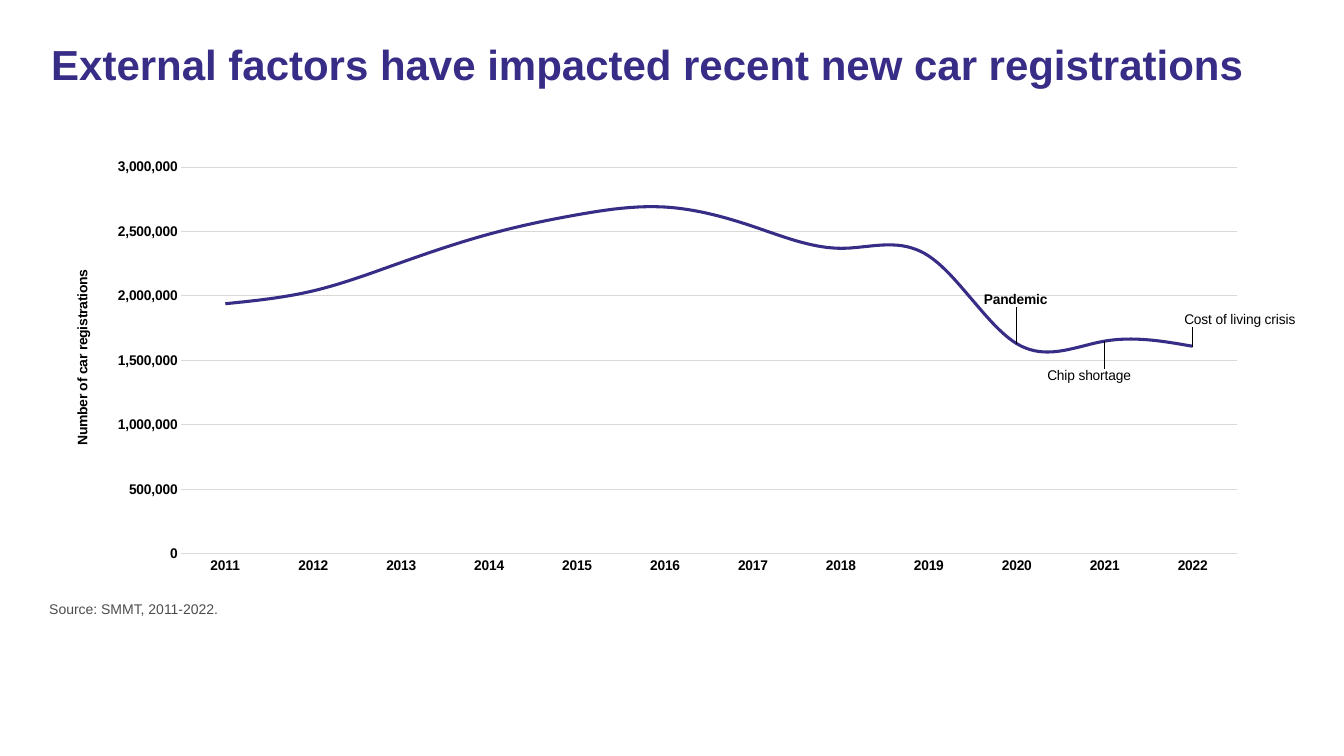
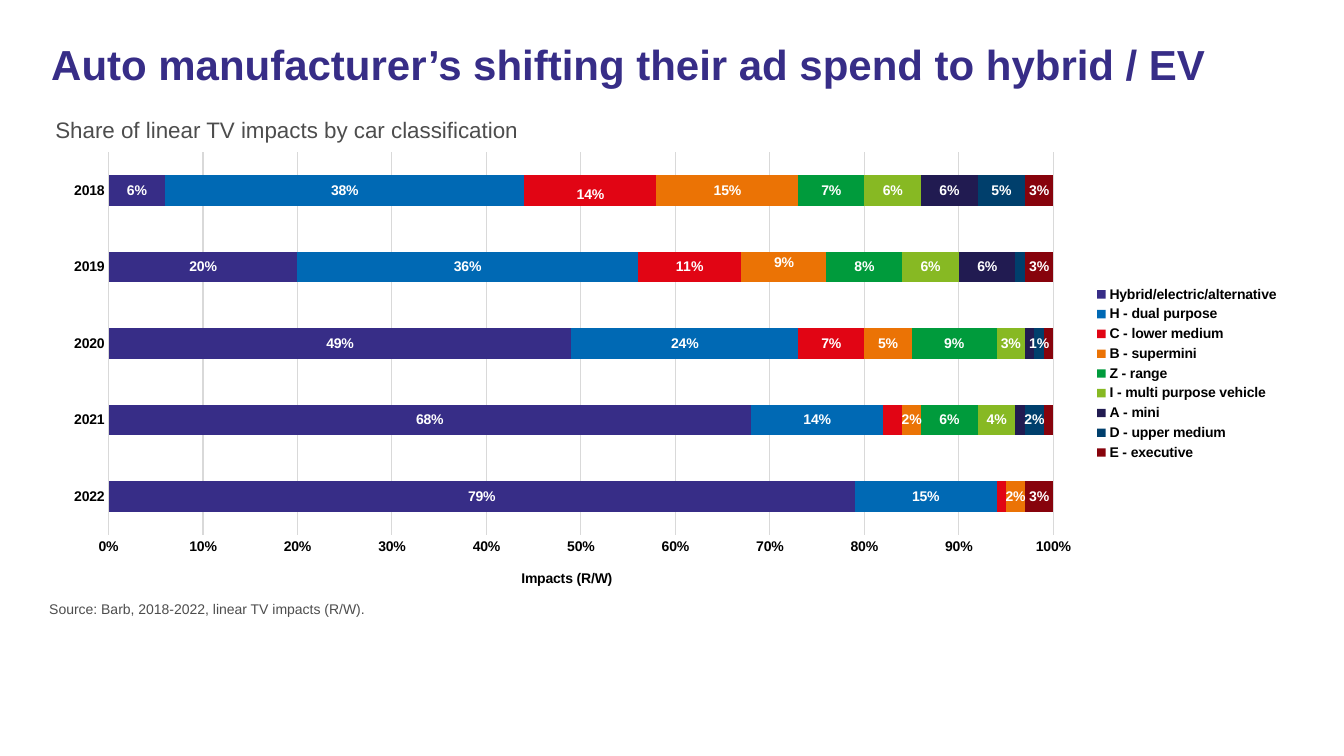
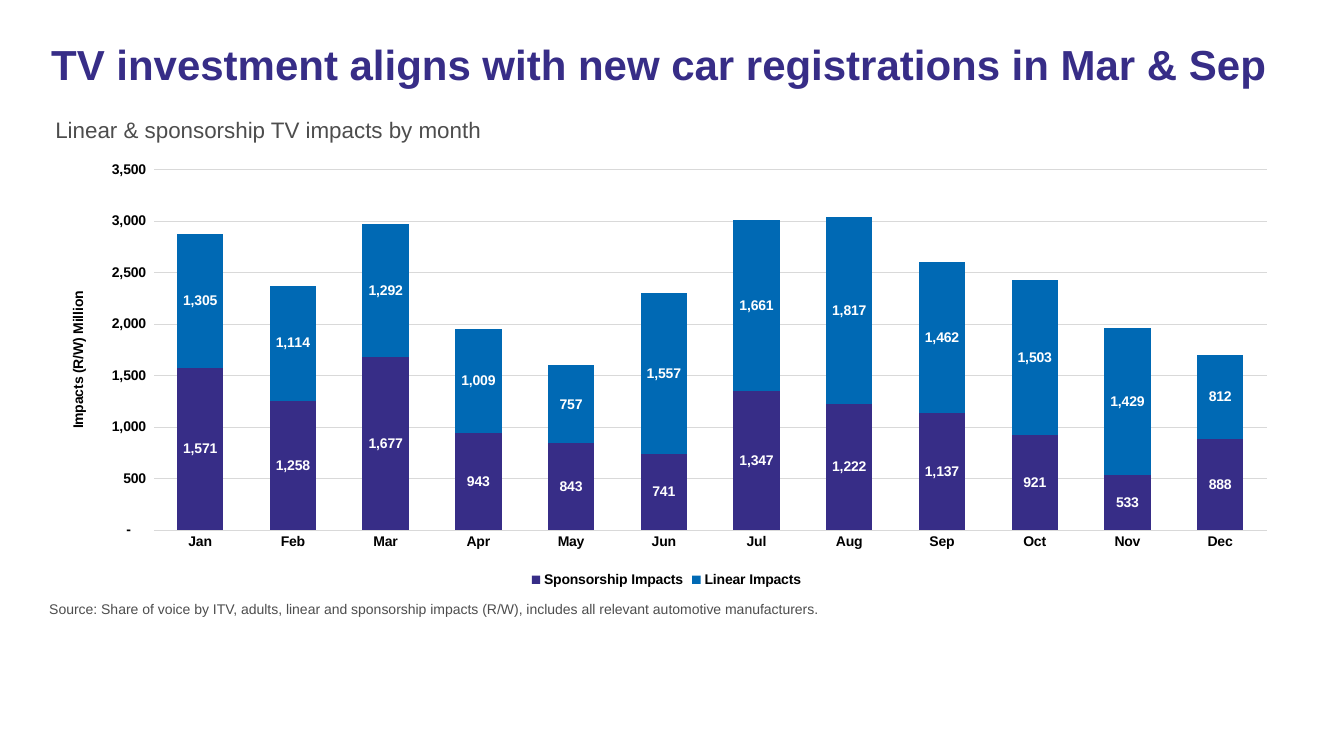
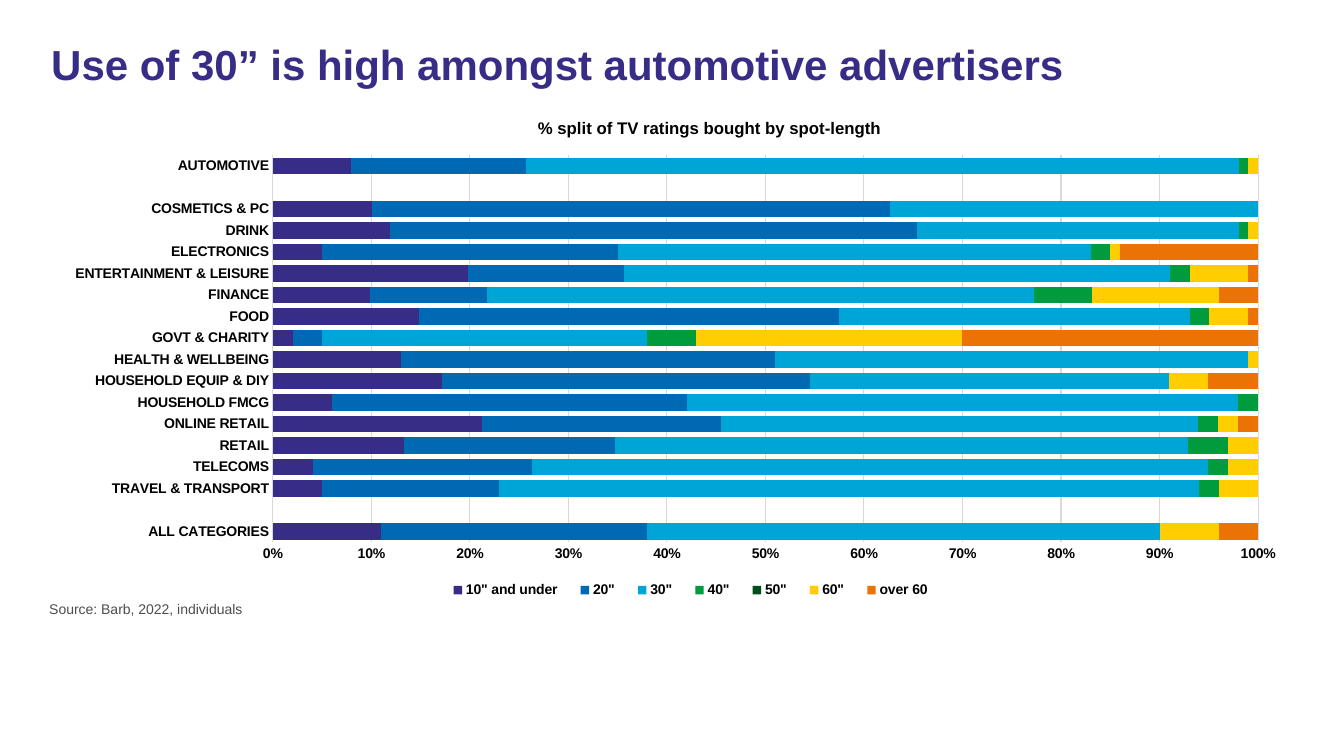
from pptx import Presentation
from pptx import util as u
from pptx.chart.data import CategoryChartData
from pptx.dml.color import RGBColor
from pptx.enum import chart as ch
from pptx.oxml import parse_xml

INK = {
    "black": "000000", "white": "FFFFFF", "text": "4D4D4D", "grid": "D9D9D9",
    "violet": "372D87", "blue": "0069B4", "sky": "00A5D7", "red": "E10514",
    "orange": "EB7305", "green": "009B3C", "lime": "87B923", "night": "211B51",
    "navy": "003F6C", "wine": "87030C", "forest": "004E1E", "yellow": "FFCD00",
}
FACE = "Arial"
NS = 'xmlns:c="http://schemas.openxmlformats.org/drawingml/2006/chart"'
LEAD = (f'<c:extLst {NS}><c:ext uri="{{CE6537A1-D6FC-4f65-9D91-7224C49458BB}}" '
        'xmlns:c15="http://schemas.microsoft.com/office/drawing/2012/chart">'
        '<c15:showLeaderLines val="1"/></c:ext></c:extLst>')
COUNT = '_-* #,##0_-;\\-* #,##0_-;_-* "-"??_-;_-@_'


def place(node, box, mode="edge", first=1):
    """Set a manual layout on a chart part, as fractions of the chart."""
    for old in node.xpath("./c:layout"):
        node.remove(old)
    parts = ['<c:layoutTarget val="inner"/>'] if first == 0 else []
    if mode:
        parts += [f'<c:{k}Mode val="{mode}"/>' for k in "xy"]
    parts += [f'<c:{k} val="{v}"/>' for k, v in zip("xywh", box)]
    node.insert(first, parse_xml(
        f'<c:layout {NS}><c:manualLayout>{"".join(parts)}</c:manualLayout></c:layout>'))


class Deck:
    def __init__(self):
        self.prs = Presentation()
        self.prs.slide_width = u.Inches(13.33)
        self.prs.slide_height = u.Inches(7.5)
        self.slide = None

    def style(self, font, size=10, ink="black", bold=True):
        font.name, font.size, font.bold = FACE, u.Pt(size), bold
        font.color.rgb = RGBColor.from_string(INK[ink])

    def text(self, box, words, size, ink="text", bold=False, lead=None):
        frame = self.slide.shapes.add_textbox(*map(u.Inches, box)).text_frame
        frame.word_wrap = True
        para = frame.paragraphs[0]
        para.line_spacing = lead
        run = para.add_run()
        run.text = words
        self.style(run.font, size, ink, bold)

    def page(self, title, source, sub=None):
        self.slide = self.prs.slides.add_slide(self.prs.slide_layouts[6])
        self.text((0.41, 0.39, 12.64, 1.12), title, 30, "violet", True, 0.9)
        self.text((0.39, 5.91, 12.4, 0.33), source, 10)
        if sub:
            self.text((0.45, 1.1, 5.51, 0.37), sub, 16)

    def chart(self, kind, box, plot, cats, rows, form, gap=None):
        """Rows are (name, ink, values)."""
        data = CategoryChartData(number_format=form)
        data.categories = cats
        for name, _, vals in rows:
            data.add_series(name, vals)
        chart = self.slide.shapes.add_chart(kind, *map(u.Inches, box), data).chart
        self.style(chart.font)
        chart.has_title = chart.has_legend = False
        place(chart._chartSpace.xpath(".//c:plotArea")[0], plot, first=0)
        for axis in (chart.category_axis, chart.value_axis):
            axis.major_tick_mark = axis.minor_tick_mark = ch.XL_TICK_MARK.NONE
            self.style(axis.tick_labels.font)
        grid = RGBColor.from_string(INK["grid"])
        axis.has_major_gridlines = True
        for line in (chart.category_axis.format.line, axis.major_gridlines.format.line):
            line.color.rgb, line.width = grid, u.Pt(0.75)
        axis.format.line.fill.background()
        axis.tick_labels.number_format = form
        axis.tick_labels.number_format_is_linked = False
        chart.category_axis.has_major_gridlines = False
        body = chart.plots[0]
        body.vary_by_categories = False
        if gap is not None:
            body.gap_width, body.overlap = gap, 100
        for ser, (_, ink, _) in zip(body.series, rows):
            tone = RGBColor.from_string(INK[ink])
            if gap is None:
                ser.smooth = True
                ser.marker.style = ch.XL_MARKER_STYLE.NONE
                ser.format.line.color.rgb, ser.format.line.width = tone, u.Pt(2.25)
            else:
                ser.format.fill.solid()
                ser.format.fill.fore_color.rgb = tone
        return chart

    def head(self, title, words, spot, size=10, turn=False):
        run = title.text_frame.paragraphs[0].add_run()
        run.text = words
        self.style(run.font, size)
        if turn:
            title._element.xpath(".//a:bodyPr")[0].set("rot", "-5400000")
        place(title._element, spot)

    def scale(self, axis, top, step):
        axis.minimum_scale, axis.maximum_scale, axis.major_unit = 0, top, step

    def legend(self, chart, side, box=None):
        chart.has_legend = True
        chart.legend.position = side
        chart.legend.include_in_layout = False
        self.style(chart.legend.font)
        if box:
            place(chart.legend._element, box)

    def labels(self, ser, form, hide=()):
        labs = ser.data_labels
        labs.show_value = True
        labs.position = ch.XL_LABEL_POSITION.CENTER
        labs.number_format, labs.number_format_is_linked = form, False
        self.style(labs.font, ink="white")
        for i in reversed(hide):
            labs._element.insert(0, parse_xml(
                f'<c:dLbl {NS}><c:idx val="{i}"/><c:delete val="1"/></c:dLbl>'))

    def shift(self, ser, i, spot, words=None, bold=True):
        """Move one label off its usual place, with its own words if given."""
        lab = ser.points[i].data_label
        if words:
            lab.text_frame.word_wrap = False
            run = lab.text_frame.paragraphs[0].add_run()
            run.text = words
            self.style(run.font, bold=bold)
            lab.position = ch.XL_LABEL_POSITION.RIGHT
        else:
            self.style(lab.font, ink="white")
            lab.position = ch.XL_LABEL_POSITION.CENTER
        place(ser.data_labels._element.xpath(f'./c:dLbl[c:idx/@val="{i}"]')[0], spot, None)


def trend(deck):
    deck.page("External factors have impacted recent new car registrations",
              "Source: SMMT, 2011-2022.")
    sold = [1940000, 2040000, 2260000, 2480000, 2630000, 2690000,
            2540000, 2370000, 2310000, 1630000, 1650000, 1610000]
    chart = deck.chart(ch.XL_CHART_TYPE.LINE, (0.46, 1.44, 12.41, 4.36),
                       (0.11, 0.05, 0.86, 0.88), [str(y) for y in range(2011, 2023)],
                       [("Series 1", "violet", sold)], "#,##0")
    deck.scale(chart.value_axis, 3000000, 500000)
    deck.head(chart.value_axis.axis_title, "Number of car registrations",
              (0.02, 0.27), turn=True)
    # Events called out along the line
    ser = chart.plots[0].series[0]
    ser.data_labels.show_value = False
    deck.shift(ser, 9, (-0.03, -0.1), "Pandemic")
    deck.shift(ser, 10, (-0.05, 0.08), "Chip shortage", False)
    deck.shift(ser, 11, (-0.01, -0.06), "Cost of living crisis", False)
    ser.data_labels._element.append(parse_xml(LEAD))


def share(deck):
    deck.page("Auto manufacturer’s shifting their ad spend to hybrid / EV",
              "Source: Barb, 2018-2022, linear TV impacts (R/W).",
              "Share of linear TV impacts by car classification")
    rows = [
        ("Hybrid/electric/alternative", "violet", [0.79, 0.68, 0.49, 0.2, 0.06]),
        ("H - dual purpose", "blue", [0.15, 0.14, 0.24, 0.36, 0.38]),
        ("C - lower medium", "red", [0.01, 0.02, 0.07, 0.11, 0.14]),
        ("B - supermini", "orange", [0.02, 0.02, 0.05, 0.09, 0.15]),
        ("Z - range", "green", [0, 0.06, 0.09, 0.08, 0.07]),
        ("I - multi purpose vehicle", "lime", [0, 0.04, 0.03, 0.06, 0.06]),
        ("A - mini", "night", [0, 0.01, 0.01, 0.06, 0.06]),
        ("D - upper medium", "navy", [0, 0.02, 0.01, 0.01, 0.05]),
        ("E - executive", "wine", [0.03, 0.01, 0.01, 0.03, 0.03]),
    ]
    chart = deck.chart(ch.XL_CHART_TYPE.BAR_STACKED_100, (0.46, 1.42, 12.33, 4.57),
                       (0.05, 0.02, 0.76, 0.83), [str(y) for y in range(2022, 2017, -1)],
                       rows, "0%", 150)
    deck.head(chart.value_axis.axis_title, "Impacts (R/W)", (0.38, 0.92))
    deck.legend(chart, ch.XL_LEGEND_POSITION.RIGHT)
    # Slivers too thin for a label
    hide = {2: (0, 1), 4: (0,), 5: (0,), 6: (0, 1, 2), 7: (0, 3), 8: (1, 2)}
    bars = chart.plots[0].series
    for i, ser in enumerate(bars):
        deck.labels(ser, "0%", hide.get(i, ()))
    for i, j, drop in ((2, 4, 0.01), (3, 3, -0.01)):
        deck.shift(bars[i], j, (0, drop))


def months(deck):
    deck.page("TV investment aligns with new car registrations in Mar & Sep",
              "Source: Share of voice by ITV, adults, linear and sponsorship impacts (R/W), "
              "includes all relevant automotive manufacturers.",
              "Linear & sponsorship TV impacts by month")
    rows = [
        ("Sponsorship Impacts", "violet",
         [1571, 1258, 1677, 943, 843, 741, 1347, 1222, 1137, 921, 533, 888]),
        ("Linear Impacts", "blue",
         [1305, 1114, 1292, 1009, 757, 1557, 1661, 1817, 1462, 1503, 1429, 812]),
    ]
    chart = deck.chart(ch.XL_CHART_TYPE.COLUMN_STACKED, (0.41, 1.51, 12.4, 4.36),
                       (0.09, 0.04, 0.89, 0.82),
                       "Jan Feb Mar Apr May Jun Jul Aug Sep Oct Nov Dec".split(),
                       rows, COUNT, 100)
    deck.scale(chart.value_axis, 3500, 500)
    deck.head(chart.value_axis.axis_title, "Impacts (R/W) Million", (0.02, 0.31), turn=True)
    deck.legend(chart, ch.XL_LEGEND_POSITION.BOTTOM)
    for ser in chart.plots[0].series:
        deck.labels(ser, COUNT)


def spots(deck):
    deck.page("Use of 30” is high amongst automotive advertisers",
              "Source: Barb, 2022, individuals")
    heads = [('10" and under', "violet"), ('20"', "blue"), ('30"', "sky"), ('40"', "green"),
             ('50"', "forest"), ('60"', "yellow"), ("over 60", "orange")]
    blank = ("", [None] * len(heads))
    table = [
        ("ALL CATEGORIES", [11, 27, 52, 0, 0, 6, 4]),
        blank,
        ("TRAVEL & TRANSPORT", [5, 18, 71, 2, 0, 4, 0]),
        ("TELECOMS", [4, 22, 68, 2, 0, 3, 0]),
        ("RETAIL", [13, 21, 57, 4, 0, 3, 0]),
        ("ONLINE RETAIL", [21, 24, 48, 2, 0, 2, 2]),
        ("HOUSEHOLD FMCG", [6, 36, 56, 2, 0, 0, 0]),
        ("HOUSEHOLD EQUIP & DIY", [17, 37, 36, 0, 0, 4, 5]),
        ("HEALTH & WELLBEING", [13, 38, 48, 0, 0, 1, 0]),
        ("GOVT & CHARITY", [2, 3, 33, 5, 0, 27, 30]),
        ("FOOD", [15, 43, 36, 2, 0, 4, 1]),
        ("FINANCE", [10, 12, 56, 6, 0, 13, 4]),
        ("ENTERTAINMENT & LEISURE", [20, 16, 56, 2, 0, 6, 1]),
        ("ELECTRONICS", [5, 30, 48, 2, 0, 1, 14]),
        ("DRINK", [12, 54, 33, 1, 0, 1, 0]),
        ("COSMETICS & PC", [10, 52, 37, 0, 0, 0, 0]),
        blank,
        ("AUTOMOTIVE", [8, 18, 73, 1, 0, 1, 0]),
    ]
    cats, vals = zip(*table)
    rows = [(*head, col) for head, col in zip(heads, zip(*vals))]
    chart = deck.chart(ch.XL_CHART_TYPE.BAR_STACKED_100, (0.48, 0.99, 12.37, 4.99),
                       (0.18, 0.11, 0.79, 0.77), cats, rows, "0%", 30)
    deck.head(chart.chart_title, "% split of TV ratings bought by spot-length",
              (0.39, 0.03), 12)
    deck.legend(chart, ch.XL_LEGEND_POSITION.BOTTOM, (0.31, 0.95, 0.41, 0.05))


def main():
    deck = Deck()
    for build in (trend, share, months, spots):
        build(deck)
    deck.prs.save("out.pptx")


if __name__ == "__main__":
    main()
